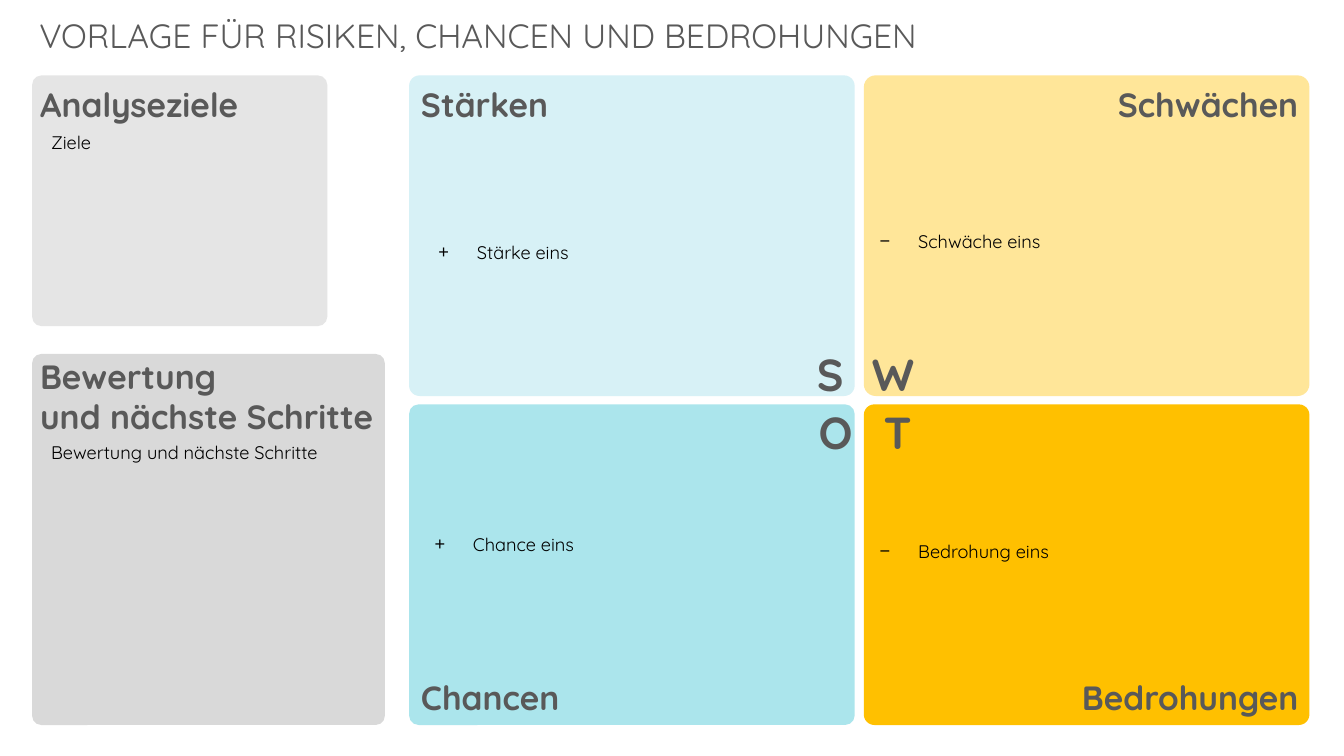
from lxml.etree import SubElement
from pptx import Presentation
from pptx.dml.color import RGBColor
from pptx.enum.shapes import MSO_SHAPE as Preset
from pptx.enum.text import MSO_ANCHOR as Anchor, MSO_AUTO_SIZE as AutoSize, PP_ALIGN as Align
from pptx.oxml.ns import qn
from pptx.util import Cm, Pt

FONT = "Quicksand"
GREY = "595959"
BLACK = "000000"


def place(shape, left, top, width, height):
    shape.left, shape.top = Cm(left), Cm(top)
    shape.width, shape.height = Cm(width), Cm(height)


def write(shape, text, size, color, bold=False, align=Align.LEFT, anchor=Anchor.TOP, inset=0.25, bullet=None, spacing=1.0):
    frame = shape.text_frame
    frame.word_wrap = True
    frame.auto_size = AutoSize.NONE
    frame.vertical_anchor = anchor
    frame.margin_left, frame.margin_right = Cm(inset), Cm(0.25)
    frame.margin_top = frame.margin_bottom = Cm(0.13)
    paragraph = frame.paragraphs[0]
    if bullet:
        properties = paragraph._p.get_or_add_pPr()
        properties.set("marL", str(Cm(0.97)))
        properties.set("indent", str(Cm(-0.97)))
        SubElement(properties, qn("a:buChar")).set("char", bullet)
    paragraph.alignment = align
    paragraph.line_spacing = spacing
    paragraph.space_before = Pt(0)
    for number, line in enumerate(text.split("\n")):
        if number:
            paragraph.add_line_break()
        run = paragraph.add_run()
        run.text = line
        run.font.name = FONT
        run.font.size = Pt(size)
        run.font.bold = bold
        run.font.color.rgb = RGBColor.from_string(color)


presentation = Presentation()
presentation.slide_width, presentation.slide_height = Cm(33.87), Cm(19.05)
layout = presentation.slide_layouts.get_by_name("Comparison")
slide = presentation.slides.add_slide(layout)

title = slide.shapes.title
place(title, 0.74, 0.25, 28.63, 1.27)
write(title, "VORLAGE FÜR RISIKEN, CHANCEN UND BEDROHUNGEN", 24, GREY)

panels = [
    (0.81, 1.9, 7.44, 6.32, 0.038, "E5E5E5"),
    (0.81, 8.92, 8.89, 9.35, 0.026, "D9D9D9"),
]
quadrants = [("D7F1F6", 0.033), ("FFE699", 0.037), ("ABE5EC", 0.03), ("FFC000", 0.033)]
for index, (color, rounding) in enumerate(quadrants):
    row, column = divmod(index, 2)
    panels.append((10.31 + 11.46 * column, 1.9 + 8.29 * row, 11.23, 8.08, rounding, color))

for left, top, width, height, rounding, color in panels:
    panel = slide.shapes.add_shape(Preset.ROUNDED_RECTANGLE, Cm(left), Cm(top), Cm(width), Cm(height))
    panel.adjustments[0] = rounding
    panel.shadow.inherit = False
    panel.fill.solid()
    panel.fill.fore_color.rgb = RGBColor.from_string(color)
    panel.line.fill.background()

lists = [
    ("Stärke eins", "+", 10.67, 3.07, 9.4, 6.5),
    ("Schwäche eins", "−", 21.79, 3.1, 10.39, 5.87),
    ("Chance eins", "+", 10.57, 10.16, 9.83, 7.04),
    ("Bedrohung eins", "−", 21.79, 10.34, 10.87, 7.04),
]
for index, (text, bullet, *box) in enumerate(lists, start=1):
    body = slide.placeholders[index]
    slide.shapes.element.append(body.element)
    place(body, *box)
    write(body, text, 13, BLACK, anchor=Anchor.MIDDLE, inset=0.38, bullet=bullet, spacing=1.15)

notes = [
    ("Ziele", 0.91, 3.1, 7.06, 4.04),
    ("Bewertung und nächste Schritte", 0.91, 10.92, 8.76, 6.12),
]
for text, *box in notes:
    note = slide.shapes.add_textbox(*map(Cm, box))
    write(note, text, 13, BLACK, inset=0.38, spacing=1.15)

labels = [
    ("Analyseziele", 24, Align.LEFT, 0.76, 1.98, 8.05, 1.27),
    ("Bewertung\nund nächste Schritte", 24, Align.LEFT, 0.76, 8.84, 9.02, 2.31),
    ("Stärken", 24, Align.LEFT, 10.36, 1.98, 10.74, 1.27),
    ("Schwächen", 24, Align.RIGHT, 22.23, 1.98, 10.74, 1.27),
    ("Chancen", 24, Align.LEFT, 10.36, 16.94, 10.74, 1.27),
    ("Bedrohungen", 24, Align.RIGHT, 22.23, 16.94, 10.74, 1.27),
    ("S", 32, Align.RIGHT, 12.04, 8.61, 9.47, 2.39),
    ("W", 32, Align.LEFT, 21.72, 8.61, 9.7, 2.39),
    ("O", 32, Align.RIGHT, 12.04, 10.06, 9.7, 1.63),
    ("T", 32, Align.LEFT, 22.02, 10.06, 9.4, 1.7),
]
for text, size, align, *box in labels:
    label = slide.shapes.add_textbox(*map(Cm, box))
    write(label, text, size, GREY, bold=True, align=align)

presentation.save("out.pptx")
